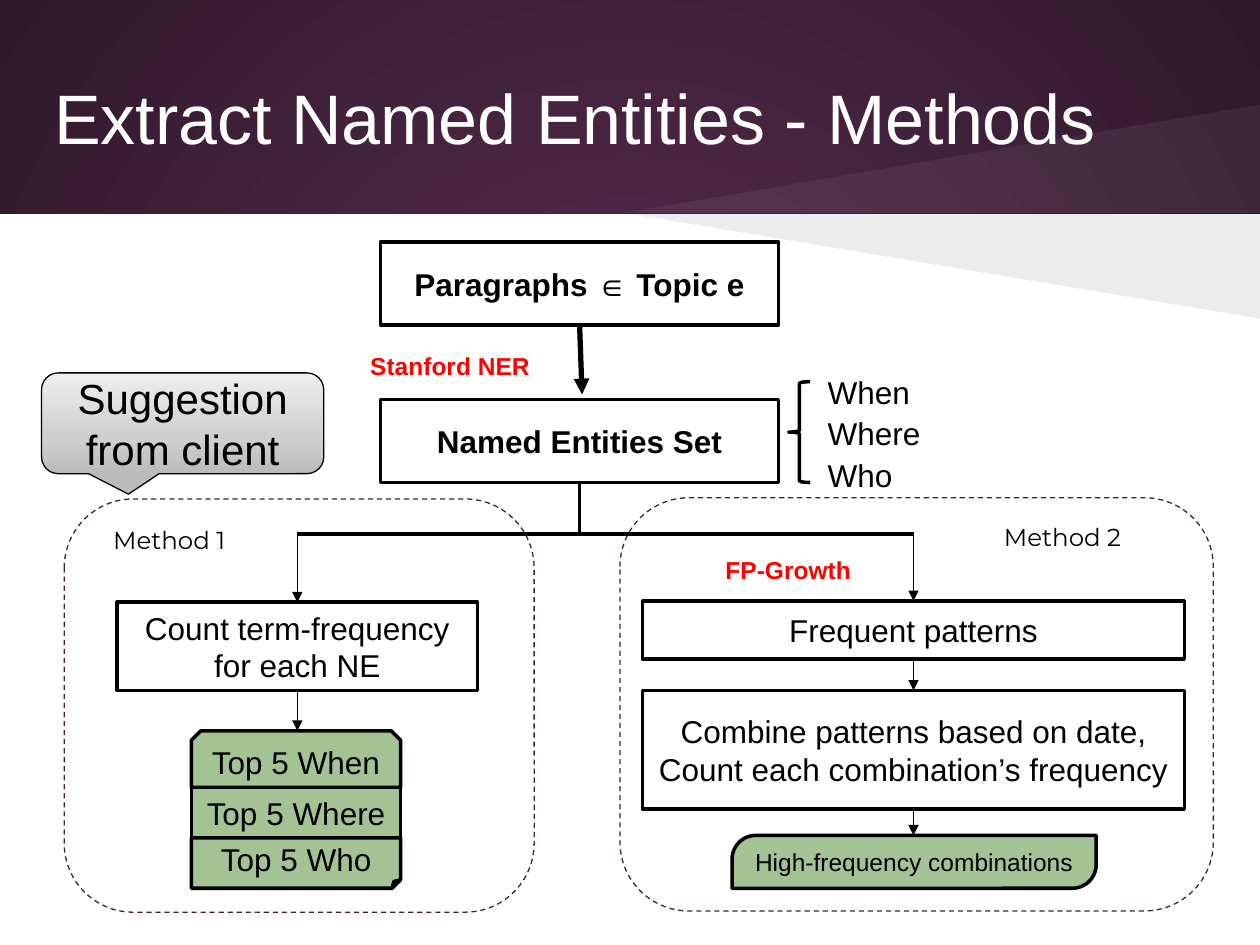
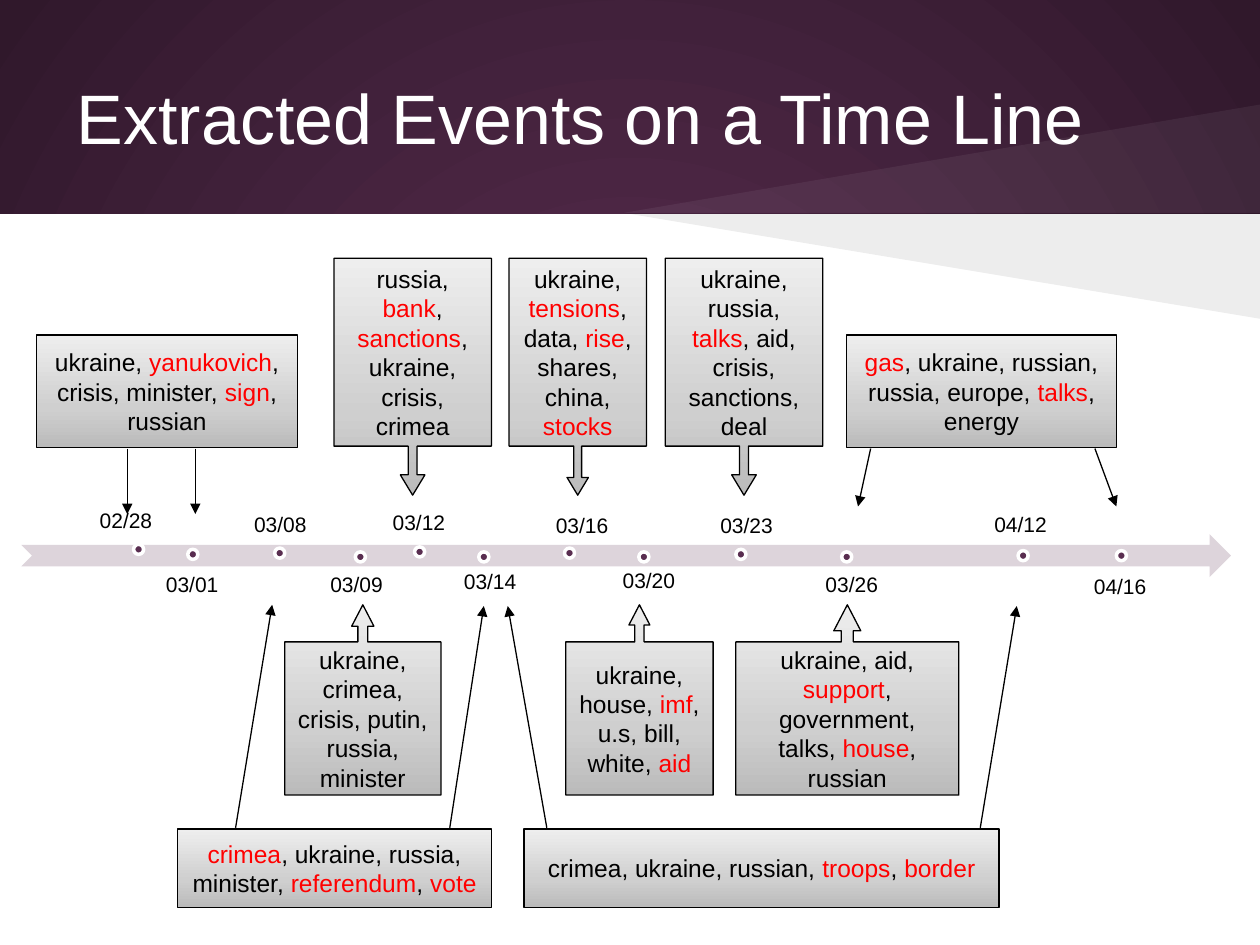
from dataclasses import dataclass, field
from typing import Any, NamedTuple, Optional, Union

import lxml.etree
import pptx
import pptx.dml.color
import pptx.dml.fill
import pptx.enum.dml
import pptx.enum.shapes
import pptx.enum.text
import pptx.oxml.ns
import pptx.shapes.shapetree
import pptx.slide
import pptx.text.text
import pptx.util

EMU_PER_PX = 9144
WHITE, BLACK, RED = "FFFFFF", "000000", "FF0000"
PLUM, DARK_PLUM, FRAME_PLUM, PALE_PLUM = "592D50", "30182B", "41213A", "DDD4DB"
GREEN = "A4C395"
GRAY = ((0, "BBBBBB"), (35, "CFCFCF"), (100, "EEEEEE"))
BACKDROP = ((0, PLUM), (100, DARK_PLUM))
SHAPE = pptx.enum.shapes.MSO_SHAPE
ALIGN = pptx.enum.text.PP_ALIGN
ANCHOR = pptx.enum.text.MSO_ANCHOR
DASH = pptx.enum.dml.MSO_LINE.DASH

Shapes = Union[pptx.shapes.shapetree.SlideShapes, pptx.shapes.shapetree.GroupShapes]
Fill = Union[str, tuple, None]


def px(length: int) -> pptx.util.Emu:
    return pptx.util.Emu(length * EMU_PER_PX)


def rgb(color: str) -> pptx.dml.color.RGBColor:
    return pptx.dml.color.RGBColor.from_string(color)


def font_format(size: int, bold: bool = False, name: str = "Arial") -> dict[str, Any]:
    return {"size": pptx.util.Pt(size), "bold": bold, "name": name}


class Area(NamedTuple):
    left: int
    top: int
    width: int
    height: int


@dataclass(frozen=True)
class Box:
    area: Area
    text: str = ""
    geometry: Any = SHAPE.RECTANGLE
    adjustments: tuple[float, ...] = ()
    fill: Fill = WHITE
    line: Optional[str] = BLACK
    line_width: float = 2
    dash: Any = None
    color: str = BLACK
    font: dict[str, Any] = field(default_factory=lambda: font_format(18))
    paragraph: dict[str, Any] = field(default_factory=lambda: {"alignment": ALIGN.CENTER})
    frame: dict[str, Any] = field(default_factory=lambda: {"vertical_anchor": ANCHOR.MIDDLE})


class Link(NamedTuple):
    start: tuple[int, int]
    end: tuple[int, int]
    width: float = 0.75
    arrow: bool = True
    start_box: str = ""
    end_box: str = ""


class Event(NamedTuple):
    date: str
    label: Area
    dot: tuple[int, int]


def apply(target: Any, values: dict[str, Any]) -> None:
    for name, value in values.items():
        setattr(target, name, value)


def add_child(parent: Any, tag: str, **attributes: str) -> Any:
    child = lxml.etree.SubElement(parent, pptx.oxml.ns.qn(tag))
    for name, value in attributes.items():
        child.set(name, value)
    return child


def set_gradient(fill: pptx.dml.fill.FillFormat, owner: Any, stops: tuple, radial: bool = False) -> None:
    fill.gradient()
    gradient = owner.find(".//" + pptx.oxml.ns.qn("a:gradFill"))
    gradient.clear()
    stop_list = add_child(gradient, "a:gsLst")
    for position, color in stops:
        stop = add_child(stop_list, "a:gs", pos=str(position * 1000))
        add_child(stop, "a:srgbClr", val=color)
    if radial:
        circle = add_child(gradient, "a:path", path="circle")
        add_child(circle, "a:fillToRect", l="50000", t="50000", r="50000", b="50000")
    else:
        add_child(gradient, "a:lin", ang="16200000", scaled="0")


def paint(shape: Any, fill: Fill, line: Optional[str] = None, line_width: float = 0.75) -> None:
    shape.shadow.inherit = False
    if fill is None:
        shape.fill.background()
    elif isinstance(fill, str):
        shape.fill.solid()
        shape.fill.fore_color.rgb = rgb(fill)
    else:
        set_gradient(shape.fill, shape.element, fill)
    if line is None:
        shape.line.fill.background()
    else:
        shape.line.color.rgb = rgb(line)
        shape.line.width = pptx.util.Pt(line_width)


def adjust(shape: Any, values: tuple[float, ...]) -> None:
    guides = shape.element.spPr.find(".//" + pptx.oxml.ns.qn("a:avLst"))
    guides.clear()
    for number, value in enumerate(values, 1):
        name = f"adj{number}" if len(values) > 1 else "adj"
        add_child(guides, "a:gd", name=name, fmla=f"val {round(value * 100000)}")


def write_text(frame: pptx.text.text.TextFrame, box: Box) -> None:
    apply(frame, {"word_wrap": True, **box.frame})
    for index, line in enumerate(box.text.split("\n")):
        paragraph = frame.add_paragraph() if index else frame.paragraphs[0]
        apply(paragraph, box.paragraph)
        for part, words in enumerate(line.split("*")):
            if words:
                run = paragraph.add_run()
                run.text = words
                apply(run.font, box.font)
                run.font.color.rgb = rgb(RED if part % 2 else box.color)


def add_box(shapes: Shapes, box: Box) -> Any:
    area = [px(length) for length in box.area]
    if box.geometry is None:
        shape = shapes.add_textbox(*area)
    else:
        shape = shapes.add_shape(box.geometry, *area)
        if box.adjustments:
            adjust(shape, box.adjustments)
        paint(shape, box.fill, box.line, box.line_width)
        if box.dash:
            shape.line.dash_style = box.dash
    if box.text:
        write_text(shape.text_frame, box)
    return shape


def add_link(shapes: Shapes, link: Link, drawn: dict[str, Any]) -> None:
    ends = [px(length) for length in link.start + link.end]
    connector = shapes.add_connector(pptx.enum.shapes.MSO_CONNECTOR.STRAIGHT, *ends)
    connector.line.color.rgb = rgb(BLACK)
    connector.line.width = pptx.util.Pt(link.width)
    properties = connector.element.spPr
    if link.arrow:
        add_child(properties.find(pptx.oxml.ns.qn("a:ln")), "a:tailEnd", type="triangle")
    add_child(properties, "a:effectLst")
    if link.start_box:
        connector.begin_connect(drawn[link.start_box], 2)
    if link.end_box:
        connector.end_connect(drawn[link.end_box], 0)


def add_diagram(slide: pptx.slide.Slide, boxes: list[Box], links: list[Link]) -> None:
    drawn = {box.text: add_box(slide.shapes, box) for box in boxes}
    for link in links:
        add_link(slide.shapes, link, drawn)


def add_wedge(shapes: Shapes, tip_top: int, color: str, opacity: int) -> Any:
    builder = shapes.build_freeform(495, 169, scale=EMU_PER_PX)
    builder.add_line_segments([(1000, 169), (1000, tip_top)], close=True)
    wedge = builder.convert_to_shape()
    paint(wedge, color)
    color_element = wedge.element.spPr.find(".//" + pptx.oxml.ns.qn("a:srgbClr"))
    add_child(color_element, "a:alpha", val=str(opacity * 1000))
    return wedge


def style_layout(presentation: Any, layout: pptx.slide.SlideLayout, shapes: Shapes) -> None:
    master = presentation.slide_master
    set_gradient(master.background.fill, master.element, BACKDROP, radial=True)
    for placeholder in list(layout.placeholders):
        if placeholder.placeholder_format.idx:
            layout.shapes.element.remove(placeholder.element)
    panel = add_box(shapes, Box(Area(0, 170, 1000, 580), line=None))
    wedges = [add_wedge(shapes, 83, WHITE, 6), add_wedge(shapes, 253, BLACK, 7)]
    for shape in [panel, *wedges]:
        layout.shapes.element.append(shape.element)


def set_title(slide: pptx.slide.Slide, text: str, left: int, width: int) -> None:
    title = slide.shapes.title
    area = Area(left, 30, width, 125)
    apply(title, {name: px(length) for name, length in area._asdict().items()})
    margins = {f"margin_{side}": px(10) for side in ("left", "top", "right", "bottom")}
    frame = {"vertical_anchor": ANCHOR.MIDDLE, "auto_size": pptx.enum.text.MSO_AUTO_SIZE.NONE, **margins}
    write_text(title.text_frame, Box(area, text, color=WHITE, font=font_format(40), frame=frame,
                                     paragraph={"alignment": ALIGN.LEFT}))
    properties = title.text_frame.paragraphs[0]._p.get_or_add_pPr()
    properties.set("marL", "0")
    properties.set("indent", str(px(33)))


def label(area: Area, text: str, color: str, font: dict[str, Any], spacing: float = 1.0) -> Box:
    return Box(area, text, None, color=color, font=font, frame={},
               paragraph={"alignment": ALIGN.LEFT, "line_spacing": spacing})


def build_methods(slide: pptx.slide.Slide) -> None:
    set_title(slide, "Extract Named Entities - Methods", 0, 1000)
    source, entities = "Paragraphs ∈ Topic e", "Named Entities Set"
    count, patterns = "Count term-frequency for each NE", "Frequent patterns"
    combine = "Combine patterns based on date,\nCount each combination’s frequency"
    bold, tag, method = font_format(18, True), font_format(14, True), font_format(14, name="Montserrat")
    frames = [Box(area, geometry=SHAPE.ROUNDED_RECTANGLE, adjustments=(0.167,), fill=None,
                  line=FRAME_PLUM, line_width=0.75, dash=DASH)
              for area in (Area(51, 396, 373, 328), Area(492, 395, 471, 328))]
    boxes = [
        Box(Area(302, 192, 316, 66), source, font=bold),
        Box(Area(302, 317, 316, 66), entities, font=bold),
        label(Area(284, 274, 166, 34), "Stanford NER", RED, tag),
        Box(Area(93, 478, 286, 70), count),
        Box(Area(626, 303, 17, 80), geometry=SHAPE.LEFT_BRACE, adjustments=(0.083, 0.5), fill=None),
        label(Area(647, 288, 100, 107), "When\nWhere\nWho", BLACK, font_format(18), 1.1),
        Box(Area(152, 580, 166, 45), "Top 5 When", SHAPE.SNIP_2_SAME_RECTANGLE, (0.167, 0), GREEN),
        Box(Area(152, 625, 166, 40), "Top 5 Where", fill=GREEN),
        Box(Area(152, 665, 166, 40), "Top 5 Who", SHAPE.FOLDED_CORNER, (0.167,), GREEN),
        Box(Area(510, 477, 430, 46), patterns),
        label(Area(80, 412, 133, 34), "Method 1", BLACK, method),
        label(Area(787, 409, 133, 34), "Method 2", BLACK, method),
        label(Area(566, 436, 157, 34), "FP-Growth", RED, tag),
        Box(Area(510, 548, 430, 94), combine),
        Box(Area(581, 663, 289, 42), "High-frequency combinations", SHAPE.ROUND_2_DIAG_RECTANGLE,
            (0.45, 0), GREEN, font=font_format(14)),
        Box(Area(33, 296, 224, 80), "Suggestion from client", SHAPE.ROUNDED_RECTANGULAR_CALLOUT,
            (-0.192, 0.703, 0.167), GRAY, line_width=0.75, font=font_format(24)),
    ]
    links = [
        Link((460, 258), (462, 313), 3, start_box=source),
        Link((460, 383), (460, 424), 2, False, start_box=entities),
        Link((236, 424), (725, 424), 2, False),
        Link((236, 424), (236, 478), end_box=count),
        Link((725, 424), (725, 477), end_box=patterns),
        Link((236, 548), (236, 580), start_box=count),
        Link((725, 523), (725, 548), start_box=patterns, end_box=combine),
        Link((725, 642), (725, 663), start_box=combine),
    ]
    add_diagram(slide, frames + boxes, links)


def add_timeline(slide: pptx.slide.Slide) -> None:
    shapes = slide.shapes.add_group_shape().shapes
    add_box(shapes, Box(Area(17, 424, 960, 34), geometry=SHAPE.NOTCHED_RIGHT_ARROW,
                        adjustments=(0.5, 0.5), fill=PALE_PLUM, line=None))
    events = [
        Event("02/28", Area(55, 403, 90, 22), (106, 432)),
        Event("03/01", Area(109, 449, 87, 32), (149, 436)),
        Event("03/08", Area(184, 405, 77, 25), (218, 435)),
        Event("03/09", Area(243, 457, 80, 16), (282, 438)),
        Event("03/12", Area(299, 409, 67, 14), (329, 434)),
        Event("03/14", Area(344, 454, 90, 17), (380, 438)),
        Event("03/16", Area(421, 409, 82, 18), (448, 435)),
        Event("03/20", Area(487, 451, 56, 22), (507, 438)),
        Event("03/23", Area(560, 404, 65, 28), (584, 436)),
        Event("03/26", Area(650, 454, 52, 22), (668, 438)),
        Event("04/12", Area(785, 409, 50, 17), (808, 437)),
        Event("04/16", Area(863, 462, 52, 9), (886, 437)),
    ]
    margins = {f"margin_{side}": 0 for side in ("left", "top", "right", "bottom")}
    spacing = {"alignment": ALIGN.CENTER, "line_spacing": 0.9, "space_after": pptx.util.Pt(4.2)}
    for event in events:
        add_box(shapes, Box(event.label, event.date, None, font=font_format(12), paragraph=spacing,
                            frame={"vertical_anchor": ANCHOR.MIDDLE, **margins}))
        add_box(shapes, Box(Area(*event.dot, 8, 8), geometry=SHAPE.OVAL, fill=PLUM, line=WHITE))


def keywords(area: Area, text: str, geometry: Any = SHAPE.RECTANGLE, adjustments: tuple = ()) -> Box:
    return Box(area, text, geometry, adjustments, GRAY, line_width=0.75, font=font_format(14))


def build_events(slide: pptx.slide.Slide) -> None:
    set_title(slide, "Extracted Events on a Time Line", 18, 933)
    add_timeline(slide)
    above = [(265, 125, "russia, *bank*, *sanctions*, ukraine, crisis, crimea"),
             (404, 109, "ukraine, *tensions*, data, *rise*, shares, china, *stocks*"),
             (528, 125, "ukraine, russia, *talks*, aid, crisis, sanctions, deal")]
    below = [(226, 124, "ukraine, crimea, crisis, putin, russia, minister"),
             (449, 117, "ukraine, house, *imf*, u.s, bill, white, *aid*"),
             (584, 177, "ukraine, aid, *support*, government, talks, *house*, russian")]
    boxes = [keywords(Area(left, 205, width, 188), text, SHAPE.DOWN_ARROW_CALLOUT,
                      (0.057, 0.078, 0.129, 0.793)) for left, width, text in above]
    boxes += [keywords(Area(left, 480, width, 151), text, SHAPE.UP_ARROW_CALLOUT,
                       (0.063, 0.071, 0.137, 0.805)) for left, width, text in below]
    boxes += [
        keywords(Area(29, 266, 207, 89), "ukraine, *yanukovich*, crisis, minister, *sign*, russian"),
        keywords(Area(672, 266, 214, 89), "*gas*, ukraine, russian, russia, europe, *talks*, energy"),
        keywords(Area(141, 658, 249, 62), "*crimea*, ukraine, russia, minister, *referendum*, *vote*"),
        keywords(Area(416, 658, 377, 62), "crimea, ukraine, russian, *troops*, *border*"),
    ]
    downward = [(101, 101, 408), (155, 155, 408), (691, 681, 402), (869, 886, 402)]
    upward = [(187, 216, 480), (357, 384, 481), (434, 403, 481), (778, 807, 481)]
    links = [Link((start, 356), (end, tip)) for start, end, tip in downward]
    links += [Link((start, 657), (end, tip)) for start, end, tip in upward]
    add_diagram(slide, boxes, links)


def main() -> None:
    presentation = pptx.Presentation()
    apply(presentation, {"slide_width": px(1000), "slide_height": px(750)})
    layout = presentation.slide_layouts.get_by_name("Title Only")
    slides = [presentation.slides.add_slide(layout) for _ in range(2)]
    style_layout(presentation, layout, slides[0].shapes)
    build_methods(slides[0])
    build_events(slides[1])
    presentation.save("out.pptx")


if __name__ == "__main__":
    main()
